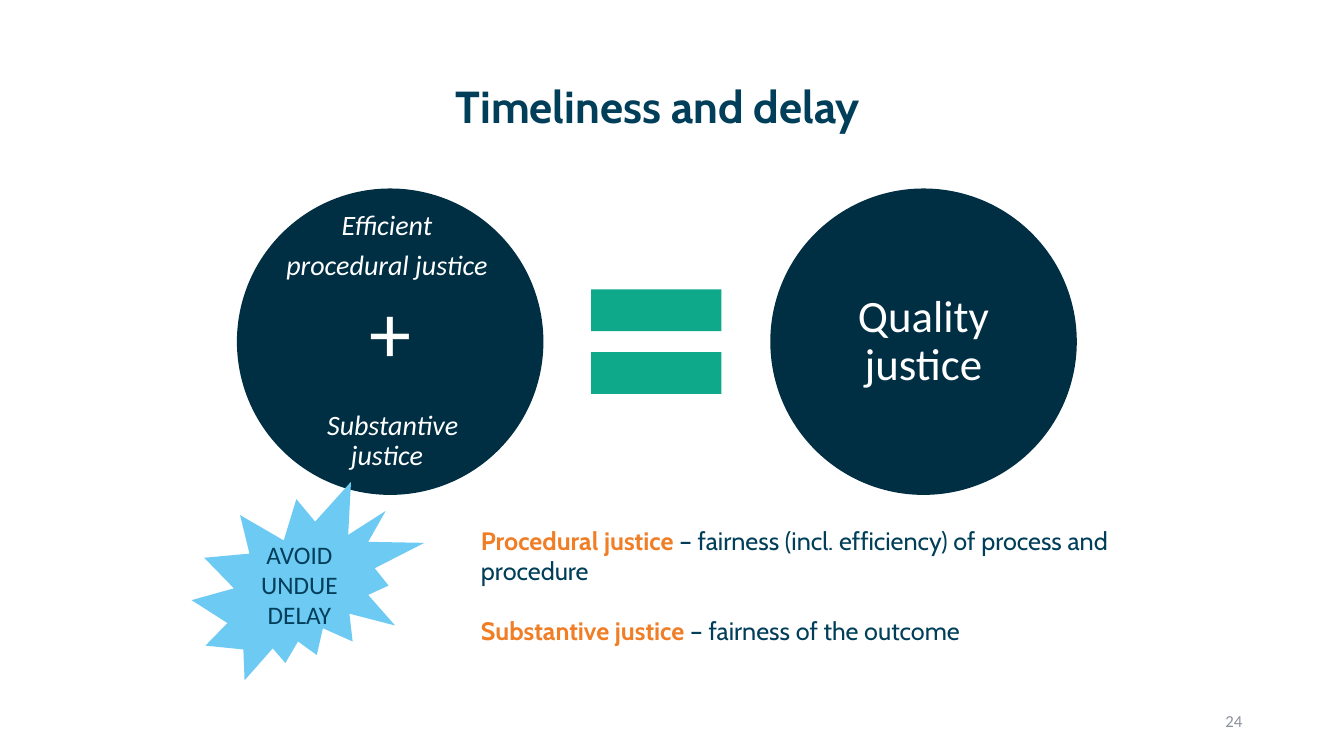
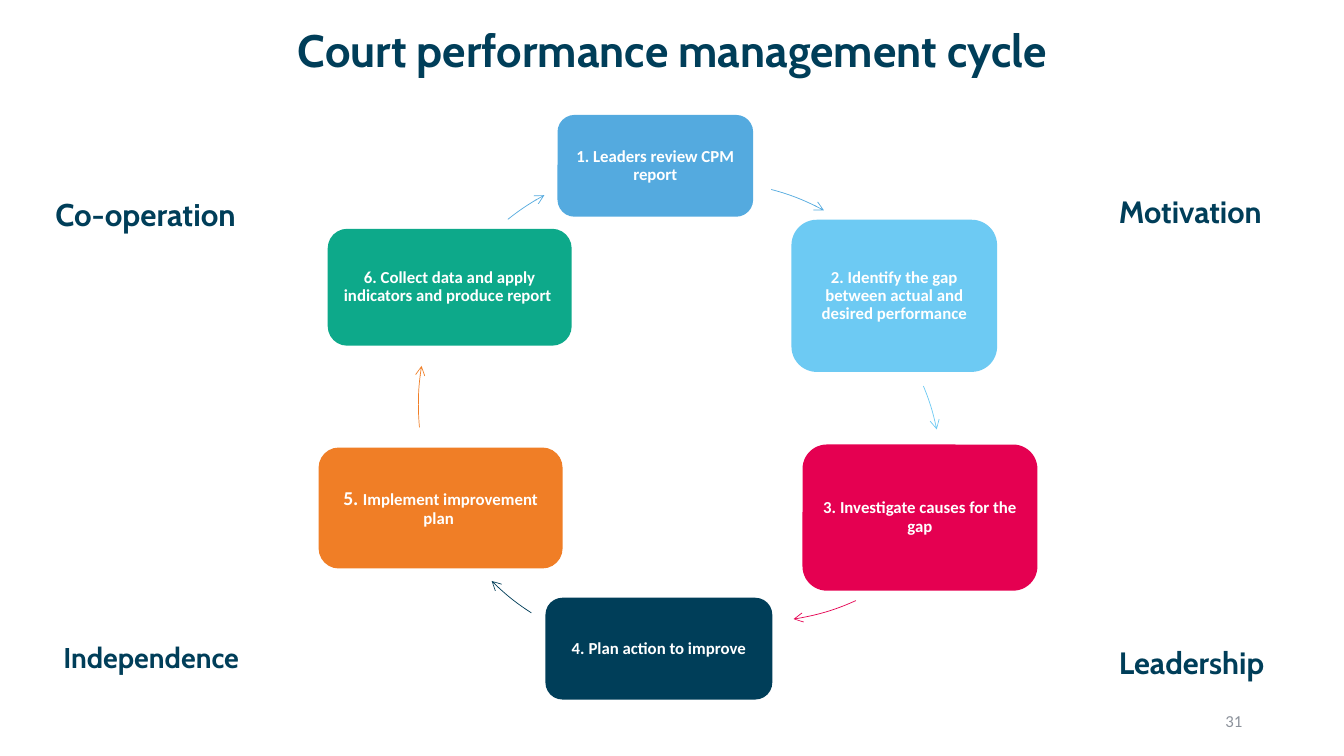
from dataclasses import dataclass
from math import atan2, degrees

from pptx import Presentation
from pptx.dml.color import RGBColor
from pptx.enum.shapes import MSO_SHAPE
from pptx.enum.text import MSO_ANCHOR, MSO_AUTO_SIZE, PP_ALIGN
from pptx.oxml.ns import qn
from pptx.util import Pt
from lxml.etree import SubElement


@dataclass(frozen=True)
class Theme:
    heading: str = "Cabin"
    body: str = "Calibri"
    ink: str = "003E59"
    deep: str = "002F43"
    green: str = "0DA98A"
    sky: str = "6DCAF3"
    blue: str = "54AADF"
    red: str = "E50051"
    orange: str = "F07E26"
    grey: str = "8C929B"
    white: str = "FFFFFF"
    title_size: float = 32
    text_size: float = 18
    step_size: float = 12
    number_size: float = 12


THEME = Theme()
EMU_PER_PX = 9144  # 100 px to the inch
SLIDE_SIZE = (1333, 750)
NUMBER_BOX = (942, 695, 300, 40)
ARC_DIAMETER = 479
ARC_UNITS_PER_DEGREE = 0.6  # 60000 units a degree, on an adjustment scale of 100000

# Each paragraph is a list of runs: (text, format that differs from the box's own)
EMPHASIS = {"color": THEME.orange, "bold": True}
JUSTICE = {"size": 20, "italic": True}
CIRCLES = [
    ((235, 187, 304, 304), 4, [
        [("Efficient ", JUSTICE)],
        [("procedural justice ", JUSTICE)],
        [("+", {"size": 60})],
        [(" ", {"size": 16}), ("Substantive justice ", JUSTICE)],
    ]),
    ((764, 187, 304, 304), 4, [[("Quality justice", {"size": 32})]]),
]
EQUALS_BOX = (563, 251, 176, 176)
BURST_BOX = (190, 478, 231, 197)
BURST_TEXT = [[("AVOID UNDUE DELAY", {})]]
DEFINITIONS_BOX = (467, 516, 662, 162)
DEFINITIONS = [
    [("Procedural justice ", EMPHASIS),
     ("– fairness (incl. efficiency) of process and procedure", {})],
    [("Substantive justice ", EMPHASIS), ("– fairness of the outcome", {})],
]

# Box, fill, runs, then the arrow to the next step: circle corner, start, end, colour
STEPS = [
    ((553, 114, 194, 101), THEME.blue, [("1. Leaders review CPM report", {})],
     (464, 180), (765, 188), (817, 209), THEME.blue),
    ((785, 218, 204, 151), THEME.sky,
     [("2. Identify the gap between actual and desired performance", {})],
     (455, 235), (916, 383), (929, 426), THEME.sky),
    ((796, 441, 233, 145), THEME.red, [("3. Investigate causes for the gap", {})],
     (511, 138), (849, 596), (787, 614), THEME.red),
    ((541, 593, 225, 101), THEME.ink, [("4. Plan action to improve", {})],
     (417, 167), (527, 608), (488, 576), THEME.ink),
    ((316, 444, 242, 120), THEME.orange,
     [("5. ", {"size": 14}), ("Implement improvement plan ", {})],
     (415, 162), (416, 424), (418, 363), THEME.orange),
    ((325, 227, 242, 116), THEME.green,
     [("6. Collect data and apply indicators and produce report ", {})],
     (414, 165), (504, 218), (540, 194), THEME.blue),
]
# Text, box, size, line spacing
VALUES = [
    ("Co-operation", (45, 189, 203, 56), 22.4, 0.7),
    ("Motivation", (1100, 189, 203, 46), 22, 0.9),
    ("Leadership", (1100, 636, 203, 46), 22, 0.9),
    ("Independence", (53, 631, 203, 46), 20.4, 0.9),
]


def emu(lengths):
    return [round(length * EMU_PER_PX) for length in lengths]


def place(shape, box):
    shape.left, shape.top, shape.width, shape.height = emu(box)


def write(shape, paragraphs, style, align=PP_ALIGN.LEFT, spacing=1.0, before=0,
          after_share=0, anchor=MSO_ANCHOR.MIDDLE, inset=None):
    """Fill a shape with runs; after_share is the space after as a share of type size."""
    frame = shape.text_frame
    settings = {"word_wrap": True, "auto_size": MSO_AUTO_SIZE.NONE, "vertical_anchor": anchor}
    if inset is not None:
        margin = inset * EMU_PER_PX
        settings |= {f"margin_{side}": margin for side in ("left", "right", "top", "bottom")}
    for name, value in settings.items():
        setattr(frame, name, value)
    for index, runs in enumerate(paragraphs):
        paragraph = frame.add_paragraph() if index else frame.paragraphs[0]
        sizes = [(style | changes)["size"] for _, changes in runs]
        layout = {
            "alignment": align,
            "line_spacing": spacing,
            "space_before": Pt(before if index else 0),
            "space_after": Pt(max(sizes) * after_share),
        }
        for name, value in layout.items():
            setattr(paragraph, name, value)
        for text, changes in runs:
            look = style | changes
            run = paragraph.add_run()
            run.text = text
            run.font.color.rgb = RGBColor.from_string(look["color"])
            font = {"name": look["font"], "size": Pt(look["size"]),
                    "bold": look.get("bold", False), "italic": look.get("italic", False)}
            for name, value in font.items():
                setattr(run.font, name, value)


def add_filled(slide, kind, box, color):
    shape = slide.shapes.add_shape(kind, *emu(box))
    shape.shadow.inherit = False
    shape.fill.solid()
    shape.fill.fore_color.rgb = RGBColor.from_string(color)
    shape.line.fill.background()
    return shape


def add_label(slide, text, box, style, **layout):
    write(slide.shapes.add_textbox(*emu(box)), [[(text, {})]], style, **layout)


def add_arc_arrow(slide, corner, start, end, color):
    """Draw a clockwise part of a circle, given by its top left corner, with an open head."""
    left, top = corner
    arrow = slide.shapes.add_shape(MSO_SHAPE.ARC, *emu((left, top, ARC_DIAMETER, ARC_DIAMETER)))
    for index, (x, y) in enumerate((start, end)):
        angle = degrees(atan2(y - top - ARC_DIAMETER / 2, x - left - ARC_DIAMETER / 2)) % 360
        arrow.adjustments[index] = angle * ARC_UNITS_PER_DEGREE
    arrow.shadow.inherit = False
    arrow.fill.background()
    arrow.line.color.rgb = RGBColor.from_string(color)
    arrow.line.width = Pt(0.5)
    SubElement(arrow.line._get_or_add_ln(), qn("a:tailEnd"), type="arrow")


def add_slide(presentation, layout_name, title, title_box, number, align, size=THEME.title_size):
    slide = presentation.slides.add_slide(presentation.slide_layouts.get_by_name(layout_name))
    place(slide.shapes.title, title_box)
    style = {"font": THEME.heading, "color": THEME.ink, "size": size, "bold": True}
    write(slide.shapes.title, [[(title, {})]], style, align, 0.9)
    add_label(slide, number, NUMBER_BOX,
              {"font": THEME.body, "color": THEME.grey, "size": THEME.number_size},
              align=PP_ALIGN.RIGHT)
    return slide


def build_timeliness(presentation):
    slide = add_slide(presentation, "Title and Content", "Timeliness and delay",
                      (442, 52, 687, 113), "24", PP_ALIGN.LEFT)
    white = {"font": THEME.body, "color": THEME.white, "size": THEME.text_size}
    for box, inset, paragraphs in CIRCLES:
        circle = add_filled(slide, MSO_SHAPE.OVAL, box, THEME.deep)
        write(circle, paragraphs, white, PP_ALIGN.CENTER, 0.9, after_share=0.35, inset=inset)
    add_filled(slide, MSO_SHAPE.MATH_EQUAL, EQUALS_BOX, THEME.green)
    burst = add_filled(slide, MSO_SHAPE.EXPLOSION2, BURST_BOX, THEME.sky)
    write(burst, BURST_TEXT, white | {"color": THEME.ink}, PP_ALIGN.CENTER)

    definitions = slide.placeholders[1]
    place(definitions, DEFINITIONS_BOX)
    write(definitions, DEFINITIONS,
          {"font": THEME.heading, "color": THEME.ink, "size": THEME.text_size},
          before=21.5, anchor=MSO_ANCHOR.TOP)
    for paragraph in definitions.text_frame.paragraphs:
        properties = paragraph._p.get_or_add_pPr()
        properties.set("marL", "0")
        properties.set("indent", "0")
        SubElement(properties, qn("a:buNone"))


def build_cycle(presentation):
    slide = add_slide(presentation, "Title Only", "Court performance management cycle",
                      (92, 3, 1150, 99), "31", PP_ALIGN.CENTER, 32.4)
    step_style = {"font": THEME.body, "color": THEME.white, "size": THEME.step_size, "bold": True}
    for box, color, runs, corner, start, end, arrow_color in STEPS:
        step = add_filled(slide, MSO_SHAPE.ROUNDED_RECTANGLE, box, color)
        write(step, [runs], step_style, PP_ALIGN.CENTER, 0.9, after_share=0.35, inset=5)
        add_arc_arrow(slide, corner, start, end, arrow_color)
    for text, box, size, spacing in VALUES:
        style = {"font": THEME.heading, "color": THEME.ink, "size": size, "bold": True}
        add_label(slide, text, box, style, spacing=spacing)


def main():
    presentation = Presentation()
    presentation.slide_width, presentation.slide_height = emu(SLIDE_SIZE)
    build_timeliness(presentation)
    build_cycle(presentation)
    presentation.save("out.pptx")


if __name__ == "__main__":
    main()
